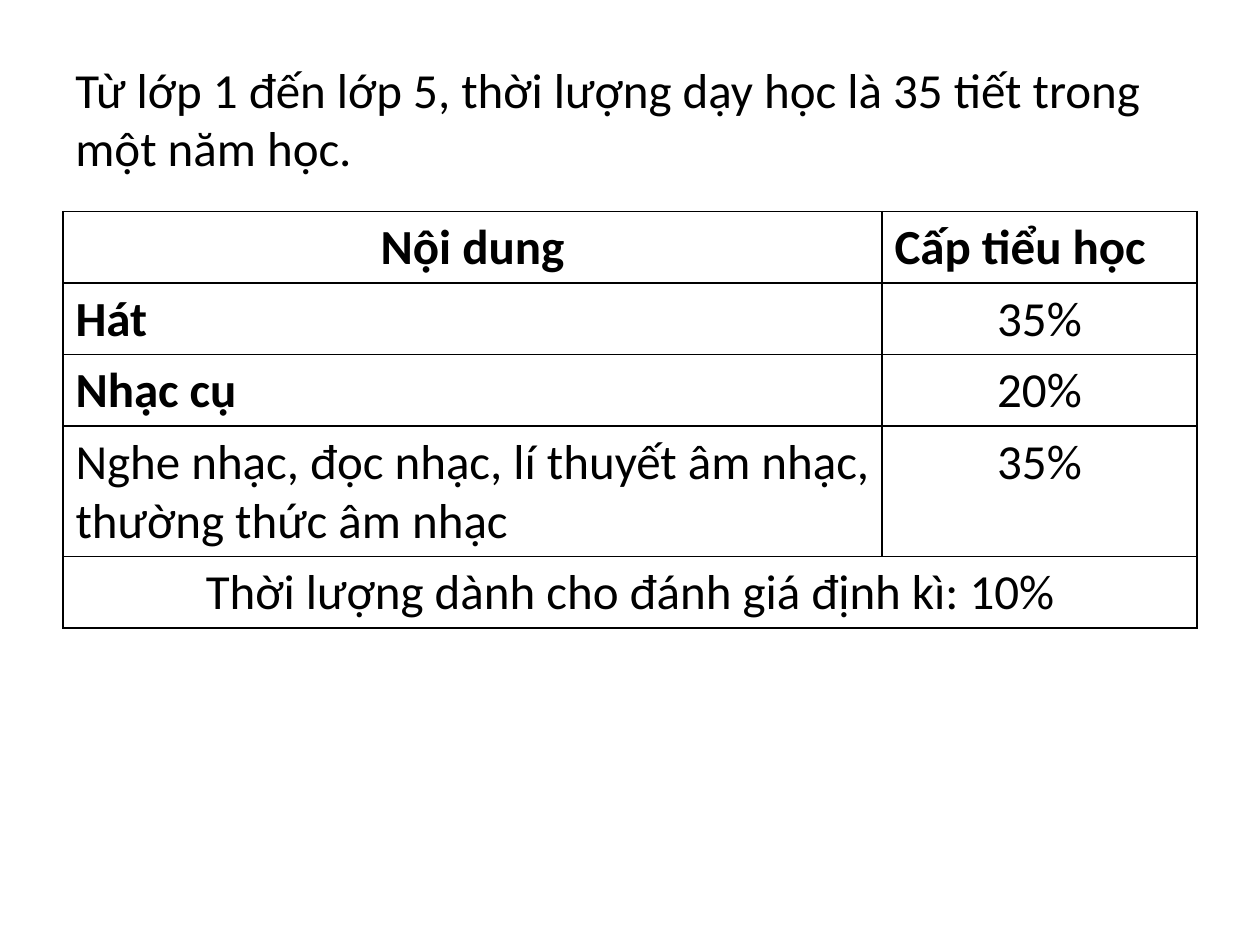
import pptx
import pptx.util
import pptx.dml.color
import pptx.enum.text
import pptx.oxml.ns
from lxml import etree

Inches = pptx.util.Inches
LEFT = pptx.enum.text.PP_ALIGN.LEFT
MID = pptx.enum.text.PP_ALIGN.CENTER


def color(text):
    return pptx.dml.color.RGBColor.from_string(text)


class Page:
    font = "Calibri"
    size = 28
    ink = "000000"
    paper = "FFFFFF"
    edge = 1

    def __init__(self, slide):
        self.slide = slide

    def style(self, frame, text, bold=False, align=LEFT):
        """Set the text of a frame and format it."""
        frame.text = text
        para = frame.paragraphs[0]
        para.alignment = align
        font = para.runs[0].font
        font.name = self.font
        font.size = pptx.util.Pt(self.size)
        font.bold = bold
        font.color.rgb = color(self.ink)

    def text(self, left, top, width, height, words):
        box = self.slide.shapes.add_textbox(
            Inches(left), Inches(top), Inches(width), Inches(height))
        box.text_frame.word_wrap = True
        self.style(box.text_frame, words)

    def border(self, cell):
        """Draw all four cell edges, placed before the fill as the schema asks."""
        props = cell._tc.get_or_add_tcPr()
        for spot, side in enumerate(("lnL", "lnR", "lnT", "lnB")):
            line = etree.Element(pptx.oxml.ns.qn("a:" + side),
                                 w=str(pptx.util.Pt(self.edge)))
            fill = etree.SubElement(line, pptx.oxml.ns.qn("a:solidFill"))
            etree.SubElement(fill, pptx.oxml.ns.qn("a:srgbClr"), val=self.ink)
            props.insert(spot, line)

    def table(self, left, top, widths, height, rows):
        """Each row lists (text, bold, align); a short row spans the full width."""
        grid = self.slide.shapes.add_table(
            len(rows), len(widths), Inches(left), Inches(top),
            Inches(sum(widths)), Inches(height * len(rows))).table
        for col, width in zip(grid.columns, widths):
            col.width = Inches(width)
        for r, row in enumerate(rows):
            grid.rows[r].height = Inches(height)
            if len(row) < len(widths):
                grid.cell(r, 0).merge(grid.cell(r, len(widths) - 1))
            for c, item in enumerate(row):
                self.style(grid.cell(r, c).text_frame, *item)
        for cell in grid.iter_cells():
            cell.fill.solid()
            cell.fill.fore_color.rgb = color(self.paper)
            self.border(cell)


def main():
    deck = pptx.Presentation()
    deck.slide_width, deck.slide_height = Inches(10), Inches(7.5)
    page = Page(deck.slides.add_slide(deck.slide_layouts[6]))

    page.text(0.5, 0.42, 9.08, 1.04,
              "Từ lớp 1 đến lớp 5, thời lượng dạy học là 35 tiết trong một năm học.")
    page.table(0.5, 1.68, (6.5, 2.5), 0.41, [
        [("Nội dung", True, MID), ("Cấp tiểu học", True, LEFT)],
        [("Hát", True, LEFT), ("35%", False, MID)],
        [("Nhạc cụ", True, LEFT), ("20%", False, MID)],
        [("Nghe nhạc, đọc nhạc, lí thuyết âm nhạc, thường thức âm nhạc",
          False, LEFT), ("35%", False, MID)],
        [("Thời lượng dành cho đánh giá định kì: 10%", False, MID)],
    ])
    deck.save("out.pptx")


if __name__ == "__main__":
    main()
